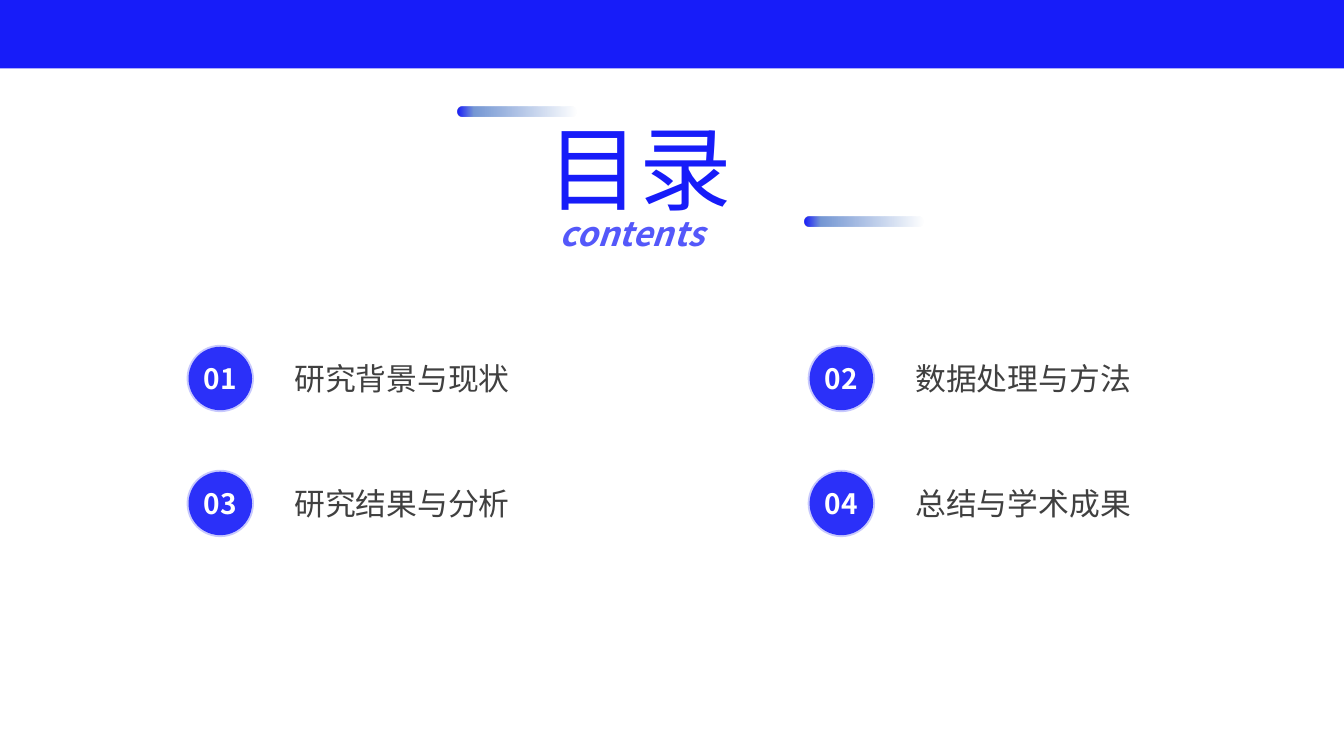
from lxml.etree import SubElement
from pptx import Presentation
from pptx.dml.color import RGBColor
from pptx.enum.shapes import MSO_SHAPE
from pptx.enum.text import MSO_ANCHOR, MSO_AUTO_SIZE, PP_ALIGN
from pptx.oxml.ns import qn
from pptx.util import Inches, Pt

TITLE = "目录"
SUBTITLE = "contents"
CHAPTERS = ["研究背景与现状", "数据处理与方法", "研究结果与分析", "总结与学术成果"]

FONT = "Noto Sans CJK SC"
COLORS = {"blue": "171CF9", "mist": "7698D4", "violet": "5458FA",
          "badge": "2B30F9", "text": "404040", "white": "FFFFFF"}
FADE = [(0, "blue", 100), (14, "mist", 100), (100, "mist", 0)]  # percent, color, opacity

SLIDE_WIDTH, SLIDE_HEIGHT = 13.33, 7.5
PILLS = [(4.54, 1.06), (7.98, 2.15)]
COLUMNS = 2
GRID_LEFT, GRID_TOP = 1.87, 3.44
COLUMN_STEP, ROW_STEP = 6.16, 1.24
BADGE_SIZE = 0.63
LABEL_OFFSET_X, LABEL_OFFSET_Y = 1.0, 0.08


def inches(*lengths):
    return [Inches(length) for length in lengths]


def color(name):
    return RGBColor.from_string(COLORS[name])


def set_opacity(fill, percent):
    color_element = fill._xPr.find(".//" + qn("a:srgbClr"))
    SubElement(color_element, qn("a:alpha"), val=str(percent * 1000))


def add_plain_shape(shapes, kind, *place):
    """Add a shape with neither shadow nor outline."""
    shape = shapes.add_shape(kind, *inches(*place))
    shape.shadow.inherit = False
    shape.line.fill.background()
    return shape


def fill_fade(shape, angle):
    """Fill with the blue-to-clear gradient; the angle runs clockwise."""
    shape.fill.gradient()
    gradient = shape._element.spPr.find(qn("a:gradFill"))
    stops = gradient.find(qn("a:gsLst"))
    for stop in list(stops):
        stops.remove(stop)
    for position, name, opacity in FADE:
        stop = SubElement(stops, qn("a:gs"), pos=str(position * 1000))
        tint = SubElement(stop, qn("a:srgbClr"), val=COLORS[name])
        SubElement(tint, qn("a:alpha"), val=str(opacity * 1000))
    gradient.find(qn("a:lin")).set("ang", str(angle * 60000))


def write(shape, text, size, name, align=PP_ALIGN.LEFT, anchor=MSO_ANCHOR.TOP,
          inset=0.05, bold=False, italic=False):
    frame = shape.text_frame
    frame.text = text
    frame.word_wrap = True
    frame.auto_size = MSO_AUTO_SIZE.NONE
    frame.vertical_anchor = anchor
    frame.margin_left = frame.margin_right = Inches(inset)
    frame.margin_top = frame.margin_bottom = Inches(inset)
    para = frame.paragraphs[0]
    para.alignment = align
    para.line_spacing = 1.0
    font = para.font
    font.name, font.size, font.bold, font.italic = FONT, Pt(size), bold, italic
    font.color.rgb = color(name)
    SubElement(font._element, qn("a:ea"), typeface=FONT)


def add_label(shapes, place, text, size, name, **style):
    write(shapes.add_textbox(*inches(*place)), text, size, name, **style)


def add_chapter(shapes, index, chapter):
    row, column = divmod(index, COLUMNS)
    left = GRID_LEFT + column * COLUMN_STEP
    top = GRID_TOP + row * ROW_STEP
    group = shapes.add_group_shape()
    badge = add_plain_shape(group.shapes, MSO_SHAPE.OVAL, left, top, BADGE_SIZE, BADGE_SIZE)
    badge.fill.solid()
    badge.fill.fore_color.rgb = color("badge")
    badge.line.color.rgb = color("badge")
    badge.line.width = Pt(2.75)
    set_opacity(badge.line.fill, 26)
    write(badge, f"{index + 1:02d}", 20, "white", align=PP_ALIGN.CENTER,
          anchor=MSO_ANCHOR.MIDDLE, inset=0, bold=True)
    add_label(group.shapes, (left + LABEL_OFFSET_X, top + LABEL_OFFSET_Y, 2.38, 0.52),
              chapter, 22, "text")


def main():
    deck = Presentation()
    deck.slide_width, deck.slide_height = inches(SLIDE_WIDTH, SLIDE_HEIGHT)
    page = deck.slides.add_slide(deck.slide_layouts[5])
    shapes = page.shapes

    header_glow = add_plain_shape(shapes, MSO_SHAPE.RECTANGLE, 0, 0, SLIDE_WIDTH, 0.92)
    fill_fade(header_glow, 90)
    header = add_plain_shape(shapes, MSO_SHAPE.RECTANGLE, 0, 0, SLIDE_WIDTH, 0.68)
    header.fill.solid()
    header.fill.fore_color.rgb = color("blue")

    for left, top in PILLS:
        pill = add_plain_shape(shapes, MSO_SHAPE.ROUNDED_RECTANGLE, left, top, 1.18, 0.1)
        pill.adjustments[0] = 0.5
        fill_fade(pill, 0)

    title = shapes.title
    title.left, title.top, title.width, title.height = inches(5.38, 1.05, 2.58, 1.38)
    write(title, TITLE, 66, "blue")
    add_label(shapes, (5.5, 2.06, 2.34, 0.5), SUBTITLE, 24, "violet", bold=True, italic=True)

    for index, chapter in enumerate(CHAPTERS):
        add_chapter(shapes, index, chapter)

    deck.save("out.pptx")


if __name__ == "__main__":
    main()
